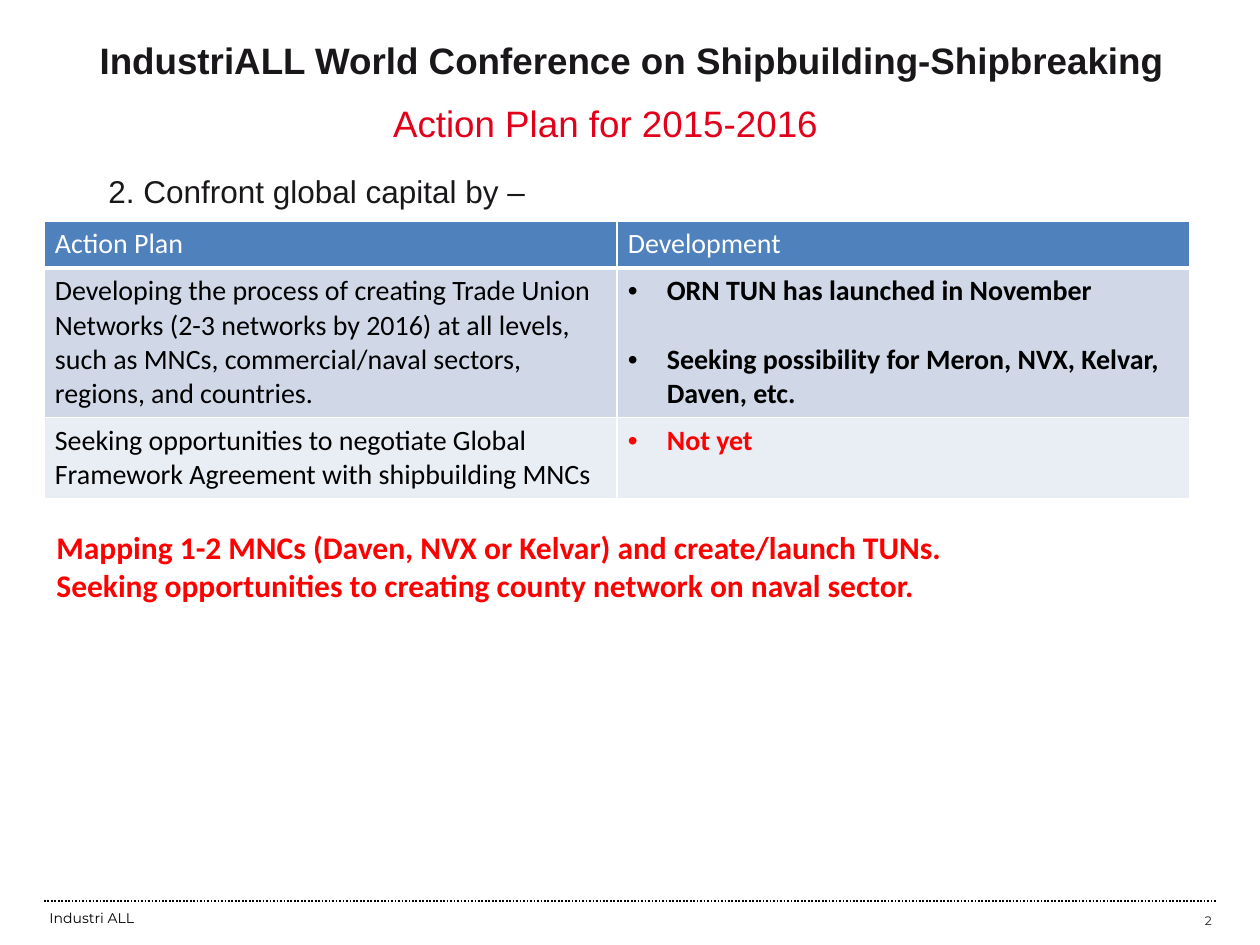
"""Build the shipbuilding action plan slide with its progress table."""
from lxml import etree
from pptx import Presentation, util as u
from pptx.dml.color import RGBColor
from pptx.enum import dml, shapes, text
from pptx.oxml.ns import qn

BLACK = RGBColor(0x00, 0x00, 0x00)
WHITE = RGBColor(0xFF, 0xFF, 0xFF)
INK = RGBColor(0x1A, 0x17, 0x1B)
CRIMSON = RGBColor(0xE2, 0x00, 0x1A)
RED = RGBColor(0xFF, 0x00, 0x00)
HEADER_BLUE = RGBColor(0x4F, 0x81, 0xBD)
BAND_DARK = RGBColor(0xD0, 0xD8, 0xE8)
BAND_LIGHT = RGBColor(0xE9, 0xED, 0xF4)

LEFT, MIDDLE = text.PP_ALIGN.LEFT, text.MSO_ANCHOR.MIDDLE
TOP = text.MSO_ANCHOR.TOP

TITLE = ("IndustriALL World Conference on Shipbuilding-Shipbreaking",
         (87, 14, 1102, 92), ("Arial", 21, INK, True))
TEXT_BOXES = [
    (["Action Plan for 2015-2016"], (232, 95, 747, 68),
     ("Arial", 21, CRIMSON, False), text.PP_ALIGN.CENTER, TOP),
    (["2. Confront global capital by –"], (96, 166, 882, 63),
     ("Arial", 18, INK, False), text.PP_ALIGN.JUSTIFY, TOP),
    (["Mapping 1-2 MNCs (Daven, NVX or Kelvar) and create/launch TUNs.",
      "Seeking opportunities to creating county network on naval sector."],
     (44, 522, 1142, 127), ("Calibri", 18, RED, True), LEFT, TOP),
    (["Industri ALL"], (37, 908, 654, 20),
     ("Montserrat", 8, BLACK, False), LEFT, MIDDLE),
    (["2"], (930, 910, 294, 21),
     ("Montserrat", 7, INK, False), text.PP_ALIGN.RIGHT, MIDDLE),
]
TABLE_BOX = (44, 221, 1146, 273)
ROWS = [
    (45, HEADER_BLUE, WHITE, ["Action Plan"], ["Development"], WHITE),
    (149, BAND_DARK, BLACK,
     ["Developing the process of creating Trade Union Networks (2-3 networks "
      "by 2016) at all levels, such as MNCs, commercial/naval sectors, "
      "regions, and countries."],
     ["ORN TUN has launched in November",
      "Seeking possibility for Meron, NVX, Kelvar, Daven, etc."], BLACK),
    (79, BAND_LIGHT, BLACK,
     ["Seeking opportunities to negotiate Global Framework Agreement with "
      "shipbuilding MNCs"], ["Not yet"], RED),
]
FOOTER_LINE = (44, 901, 1216, 901)


def px(length):
    return u.Emu(round(length * 914400 / 126))


def write(frame, lines, style, alignment=LEFT, bulleted=False, gap=0):
    font_name, size, color, bold = style
    frame.word_wrap = True
    for index, line in enumerate(lines):
        paragraph = frame.paragraphs[0] if index == 0 else frame.add_paragraph()
        paragraph.alignment = alignment
        if bulleted:
            properties = paragraph._p.get_or_add_pPr()
            properties.set("marL", str(px(39)))
            properties.set("indent", str(-px(39)))
            etree.SubElement(properties, qn("a:buFont"), typeface="Arial")
            etree.SubElement(properties, qn("a:buChar"), char="•")
        paragraph.space_before = u.Pt(gap if index else 0)
        run = paragraph.add_run()
        run.text = line
        run.font.name, run.font.size, run.font.bold = font_name, u.Pt(size), bold
        run.font.color.rgb = color


def set_borders(cell, top, bottom):
    properties = cell._tc.get_or_add_tcPr()
    for side, width in (("L", 1), ("R", 1), ("T", top), ("B", bottom)):
        line = etree.SubElement(properties, qn(f"a:ln{side}"), w=str(u.Pt(width)))
        fill = etree.SubElement(line, qn("a:solidFill"))
        etree.SubElement(fill, qn("a:srgbClr"), val=str(WHITE))


def add_title(slide):
    words, box, style = TITLE
    title = slide.shapes.title
    title.left, title.top, title.width, title.height = map(px, box)
    title.text_frame.auto_size = text.MSO_AUTO_SIZE.NONE
    title.text_frame.vertical_anchor = MIDDLE
    write(title.text_frame, [words], style)


def add_plan_table(slide):
    table = slide.shapes.add_table(len(ROWS), 2, *map(px, TABLE_BOX)).table
    for column in table.columns:
        column.width = px(TABLE_BOX[2] / 2)
    for index, (height, fill, ink, plan, progress, progress_ink) in enumerate(ROWS):
        table.rows[index].height = px(height)
        body = index > 0
        contents = ((plan, ink, False), (progress, progress_ink, body))
        for column, (lines, color, marked) in enumerate(contents):
            cell = table.cell(index, column)
            cell.margin_left = cell.margin_right = px(11)
            set_borders(cell, 3 if index == 1 else 1, 1 if body else 3)
            cell.fill.solid()
            cell.fill.fore_color.rgb = fill
            write(cell.text_frame, lines, ("Calibri", 16, color, marked),
                  bulleted=marked, gap=19.5)


def add_footer_line(slide):
    line = slide.shapes.add_connector(
        shapes.MSO_CONNECTOR.STRAIGHT, *map(px, FOOTER_LINE))
    line.line.color.rgb = BLACK
    line.line.width = u.Pt(1)
    line.line.dash_style = dml.MSO_LINE.ROUND_DOT
    etree.SubElement(line._element.spPr, qn("a:effectLst"))


def main():
    presentation = Presentation()
    presentation.slide_width, presentation.slide_height = px(1260), px(945)
    slide = presentation.slides.add_slide(presentation.slide_layouts[5])
    add_footer_line(slide)
    add_title(slide)
    add_plan_table(slide)
    for lines, box, style, alignment, anchor in TEXT_BOXES:
        frame = slide.shapes.add_textbox(*map(px, box)).text_frame
        frame.vertical_anchor = anchor
        write(frame, lines, style, alignment)
    presentation.save("out.pptx")


if __name__ == "__main__":
    main()
